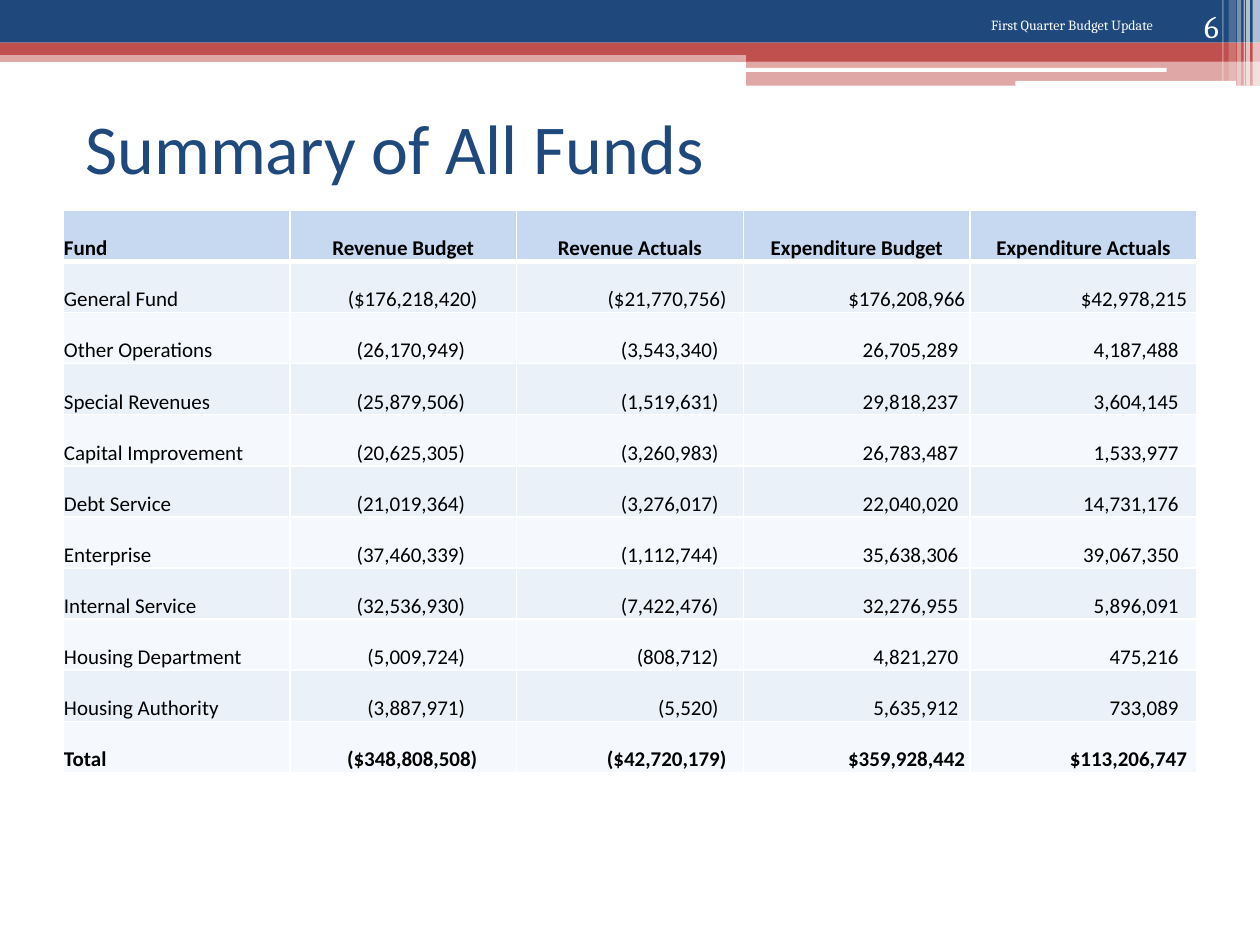
import lxml.etree
import pptx
import pptx.dml.color
import pptx.enum.shapes
import pptx.enum.text
import pptx.oxml.ns
import pptx.util

Cm = pptx.util.Cm
Pt = pptx.util.Pt
ALIGN = pptx.enum.text.PP_ALIGN
ANCHOR = pptx.enum.text.MSO_ANCHOR
SHAPE = pptx.enum.shapes.MSO_SHAPE

NAVY, RED, WHITE, BLACK = "1F497D", "C0504D", "FFFFFF", "000000"
HEADER_FILL, BAND_FILLS = "C6D9F0", ("EAF1F9", "F5F8FC")

# Left, top, width, height, colour, opacity in percent
BANDS = [
    (0, 1.02, 25.4, 0.23, RED, 50),
    (0, 0, 25.4, 0.86, NAVY, 100),
    (0, 0.86, 25.4, 0.25, RED, 100),
    (15.04, 0.99, 10.36, 0.25, RED, 100),
    (15.04, 1.22, 10.36, 0.51, RED, 50),
]
ROUNDED_LINES = [(15.01, 1.37, 8.51, 0.08), (20.47, 1.63, 4.45, 0.1)]
# Left, width, height, opacity in percent
STRIPES = [
    (25.25, 0.15, 1.73, 65),
    (25.12, 0.08, 1.73, 65),
    (25.07, 0.03, 1.73, 60),
    (24.94, 0.08, 1.73, 40),
    (24.77, 0.15, 1.63, 20),
    (24.64, 0.03, 1.63, 30),
]

FUNDS = [
    ("Fund", "Revenue Budget", "Revenue Actuals", "Expenditure Budget", "Expenditure Actuals"),
    ("General Fund", "($176,218,420)", "($21,770,756)", "$176,208,966", "$42,978,215"),
    ("Other Operations", "(26,170,949)", "(3,543,340)", "26,705,289", "4,187,488"),
    ("Special Revenues", "(25,879,506)", "(1,519,631)", "29,818,237", "3,604,145"),
    ("Capital Improvement", "(20,625,305)", "(3,260,983)", "26,783,487", "1,533,977"),
    ("Debt Service", "(21,019,364)", "(3,276,017)", "22,040,020", "14,731,176"),
    ("Enterprise", "(37,460,339)", "(1,112,744)", "35,638,306", "39,067,350"),
    ("Internal Service", "(32,536,930)", "(7,422,476)", "32,276,955", "5,896,091"),
    ("Housing Department", "(5,009,724)", "(808,712)", "4,821,270", "475,216"),
    ("Housing Authority", "(3,887,971)", "(5,520)", "5,635,912", "733,089"),
    ("Total", "($348,808,508)", "($42,720,179)", "$359,928,442", "$113,206,747"),
]
# Right margins of the figure columns, in centimetres
DOLLAR_MARGINS = (0.79, 0.34, 0.1, 0.2)
PLAIN_MARGINS = (1.04, 0.5, 0.24, 0.37)


def set_color(color_format, hex_color):
    color_format.rgb = pptx.dml.color.RGBColor.from_string(hex_color)


def set_fill(fill, hex_color, opacity=100):
    fill.solid()
    set_color(fill.fore_color, hex_color)
    if opacity < 100:
        color = fill.fore_color._xFill.find(pptx.oxml.ns.qn("a:srgbClr"))
        alpha = lxml.etree.SubElement(color, pptx.oxml.ns.qn("a:alpha"))
        alpha.set("val", str(opacity * 1000))


def format_text(text_frame, font_name, size, hex_color, align, bold=False):
    paragraph = text_frame.paragraphs[0]
    paragraph.alignment = align
    font = paragraph.runs[0].font
    font.name, font.size, font.bold = font_name, Pt(size), bold
    set_color(font.color, hex_color)


def add_block(slide, kind, left, top, width, height, hex_color, opacity=100):
    shape = slide.shapes.add_shape(kind, Cm(left), Cm(top), Cm(width), Cm(height))
    shape.shadow.inherit = False
    shape.line.fill.background()
    set_fill(shape.fill, hex_color, opacity)


def add_text(slide, box, text, font_name, size, hex_color, align, anchor):
    text_frame = slide.shapes.add_textbox(*map(Cm, box)).text_frame
    text_frame.word_wrap = True
    text_frame.vertical_anchor = anchor
    text_frame.text = text
    format_text(text_frame, font_name, size, hex_color, align)


def add_banner(slide, left, top):
    for x, y, width, height, color, opacity in BANDS:
        add_block(slide, SHAPE.RECTANGLE, left + x, top + y, width, height, color, opacity)
    for x, y, width, height in ROUNDED_LINES:
        add_block(slide, SHAPE.ROUNDED_RECTANGLE, left + x, top + y, width, height, WHITE)
    for x, width, height, opacity in STRIPES:
        add_block(slide, SHAPE.RECTANGLE, left + x, top, width, height, WHITE, opacity)
    add_text(slide, (left + 18.85, top + 0.2, 4.65, 1.27), "First Quarter Budget Update",
             "Cambria", 8, WHITE, ALIGN.RIGHT, ANCHOR.TOP)
    add_text(slide, (left + 22.71, top, 2.11, 1.02), "6",
             "Cambria", 18, WHITE, ALIGN.RIGHT, ANCHOR.BOTTOM)


def set_borders(cell, top_width, bottom_width):
    """Draw white borders; side borders are one point wide."""
    properties = cell._tc.get_or_add_tcPr()
    widths = {"a:lnL": 1, "a:lnR": 1, "a:lnT": top_width, "a:lnB": bottom_width}
    for index, (tag, width) in enumerate(widths.items()):
        line = lxml.etree.Element(pptx.oxml.ns.qn(tag), w=str(Pt(width)))
        fill = lxml.etree.SubElement(line, pptx.oxml.ns.qn("a:solidFill"))
        lxml.etree.SubElement(fill, pptx.oxml.ns.qn("a:srgbClr"), val=WHITE)
        properties.insert(index, line)


def fill_cell(cell, text, row, column):
    is_header = row == 0
    align, right_margin = ALIGN.LEFT, 0.02
    if column and is_header:
        align = ALIGN.CENTER
    elif column:
        align = ALIGN.RIGHT
        margins = DOLLAR_MARGINS if "$" in text else PLAIN_MARGINS
        right_margin = margins[column - 1]
    cell.text = text
    cell.vertical_anchor = ANCHOR.BOTTOM
    cell.margin_left = cell.margin_top = Cm(0.02)
    cell.margin_right, cell.margin_bottom = Cm(right_margin), 0
    bold = row in (0, len(FUNDS) - 1)
    format_text(cell.text_frame, "Calibri", 12, BLACK, align, bold)
    set_fill(cell.fill, HEADER_FILL if is_header else BAND_FILLS[(row - 1) % 2])
    set_borders(cell, 3 if row == 1 else 1, 3 if is_header else 1)


def add_fund_table(slide, left, top, width, height):
    frame = slide.shapes.add_table(len(FUNDS), len(FUNDS[0]),
                                   Cm(left), Cm(top), Cm(width), Cm(height))
    for row, texts in enumerate(FUNDS):
        frame.table.rows[row].height = Cm(height / len(FUNDS))
        for column, text in enumerate(texts):
            fill_cell(frame.table.cell(row, column), text, row, column)


def main():
    presentation = pptx.Presentation()
    presentation.slide_width, presentation.slide_height = Cm(25.4), Cm(19.05)
    slide = presentation.slides.add_slide(presentation.slide_layouts[6])
    add_banner(slide, 0, 0)
    add_text(slide, (1.47, 1.47, 22.86, 2.97), "Summary of All Funds",
             "Calibri", 40, NAVY, ALIGN.LEFT, ANCHOR.MIDDLE)
    add_fund_table(slide, 1.27, 4.24, 22.86, 11.33)
    presentation.save("out.pptx")


if __name__ == "__main__":
    main()
